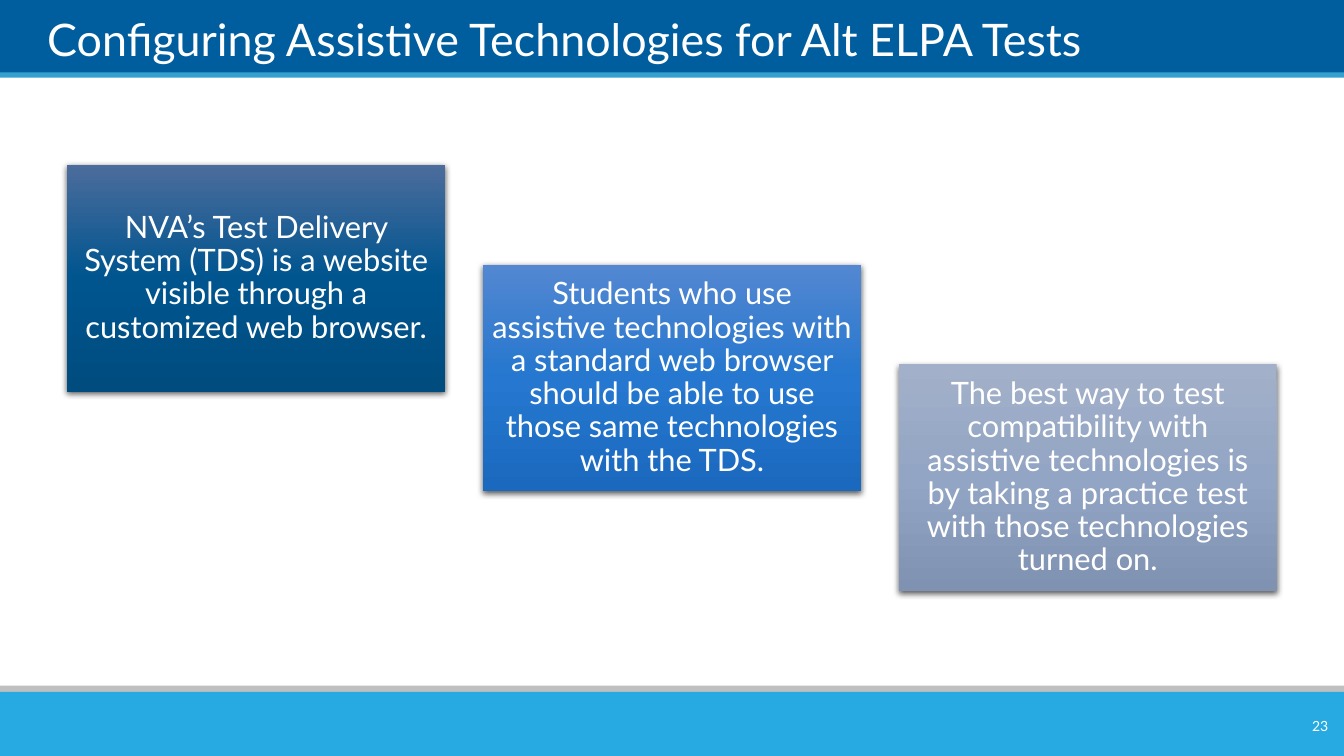
from dataclasses import dataclass

from pptx import Presentation
from pptx.dml.color import RGBColor
from pptx.enum.shapes import MSO_SHAPE as Preset
from pptx.enum.text import MSO_ANCHOR as Anchor, PP_ALIGN as Align
from pptx.oxml import parse_xml
from pptx.oxml.ns import nsdecls, qn
from pptx.shapes.autoshape import Shape
from pptx.slide import Slide
from pptx.util import Emu, Pt

EMU_PER_PX = 9525
FONT = "Lato"
COLORS = {
    "white": "FFFFFF",
    "header": "005E9E",
    "header_edge": "35A0CE",
    "footer_edge": "BFBFBF",
    "footer": "27AAE1",
    "shadow": "000000",
}


@dataclass(frozen=True)
class Box:
    left: int
    top: int
    width: int
    height: int

    def emu(self) -> list[Emu]:
        return [Emu(side * EMU_PER_PX)
                for side in (self.left, self.top, self.width, self.height)]


@dataclass(frozen=True)
class Band:
    box: Box
    color: str


@dataclass(frozen=True)
class Card:
    text: str
    gradient: tuple[str, str, str]


BANDS = [
    Band(Box(0, -1, 1280, 72), "header"),
    Band(Box(0, 69, 1280, 5), "header_edge"),
    Band(Box(0, 653, 1280, 13), "footer_edge"),
    Band(Box(0, 659, 1280, 61), "footer"),
]
CARDS = [
    Card("NVA’s Test Delivery System (TDS) is a website visible through "
         "a customized web browser.", ("4B6C9C", "00558F", "004C7F")),
    Card("Students who use assistive technologies with a standard web browser "
         "should be able to use those same technologies with the TDS.",
         ("5387D1", "2577CF", "1A69BF")),
    Card("The best way to test compatibility with assistive technologies is "
         "by taking a practice test with those technologies turned on.",
         ("A2B0C9", "93A5C4", "8092B1")),
]
FIRST_CARD = Box(64, 157, 360, 216)
STEP_X, STEP_Y = 396, 95


def write_text(shape: Shape, text: str, *, size: int, align: Align = Align.LEFT,
               anchor: Anchor = Anchor.MIDDLE, inset_x: int = 0, inset_y: int = 0,
               line_spacing: float = 1.0) -> None:
    frame = shape.text_frame
    frame.word_wrap = True
    frame.vertical_anchor = anchor
    frame.margin_left = frame.margin_right = Emu(inset_x * EMU_PER_PX)
    frame.margin_top = frame.margin_bottom = Emu(inset_y * EMU_PER_PX)
    paragraph = frame.paragraphs[0]
    paragraph.alignment = align
    paragraph.line_spacing = line_spacing
    run = paragraph.add_run()
    run.text = text
    run.font.name = FONT
    run.font.size = Pt(size)
    run.font.color.rgb = RGBColor.from_string(COLORS["white"])


def add_rectangle(slide: Slide, box: Box) -> Shape:
    shape = slide.shapes.add_shape(Preset.RECTANGLE, *box.emu())
    shape.line.fill.background()
    shape.shadow.inherit = False
    return shape


def add_band(slide: Slide, band: Band) -> None:
    shape = add_rectangle(slide, band.box)
    shape.fill.solid()
    shape.fill.fore_color.rgb = RGBColor.from_string(COLORS[band.color])


def set_gradient(shape: Shape, colors: tuple[str, str, str]) -> None:
    shape.fill.gradient()
    shape.fill.gradient_angle = 270
    stops = shape._element.spPr.find(f".//{qn('a:gsLst')}")
    for stop in list(stops):
        stops.remove(stop)
    for index, color in enumerate(colors):
        stops.append(parse_xml(
            f'<a:gs {nsdecls("a")} pos="{index * 50000}">'
            f'<a:srgbClr val="{color}"/></a:gs>'))


def set_shadow(shape: Shape) -> None:
    effects = shape._element.spPr.find(qn("a:effectLst"))
    effects.append(parse_xml(
        f'<a:outerShdw {nsdecls("a")} blurRad="{Pt(4.5)}" dist="{Pt(1.5)}" '
        f'dir="5400000" algn="ctr" rotWithShape="0">'
        f'<a:srgbClr val="{COLORS["shadow"]}"><a:alpha val="63000"/></a:srgbClr>'
        f'</a:outerShdw>'))


def add_card(slide: Slide, card: Card, index: int) -> None:
    box = Box(FIRST_CARD.left + index * STEP_X, FIRST_CARD.top + index * STEP_Y,
              FIRST_CARD.width, FIRST_CARD.height)
    shape = add_rectangle(slide, box)
    set_gradient(shape, card.gradient)
    set_shadow(shape)
    write_text(shape, card.text, size=22, align=Align.CENTER,
               inset_x=9, inset_y=9, line_spacing=0.9)


def main() -> None:
    presentation = Presentation()
    presentation.slide_width = Emu(1280 * EMU_PER_PX)
    presentation.slide_height = Emu(720 * EMU_PER_PX)
    slide = presentation.slides.add_slide(presentation.slide_layouts[6])

    for band in BANDS:
        add_band(slide, band)

    title = slide.shapes.add_textbox(*Box(45, 7, 1157, 55).emu())
    write_text(title, "Configuring Assistive Technologies for Alt ELPA Tests",
               size=32, anchor=Anchor.BOTTOM)

    for index, card in enumerate(CARDS):
        add_card(slide, card, index)

    page_number = slide.shapes.add_textbox(*Box(1201, 677, 74, 29).emu())
    write_text(page_number, "23", size=10, align=Align.RIGHT, inset_x=10, inset_y=5)

    presentation.save("out.pptx")


if __name__ == "__main__":
    main()
